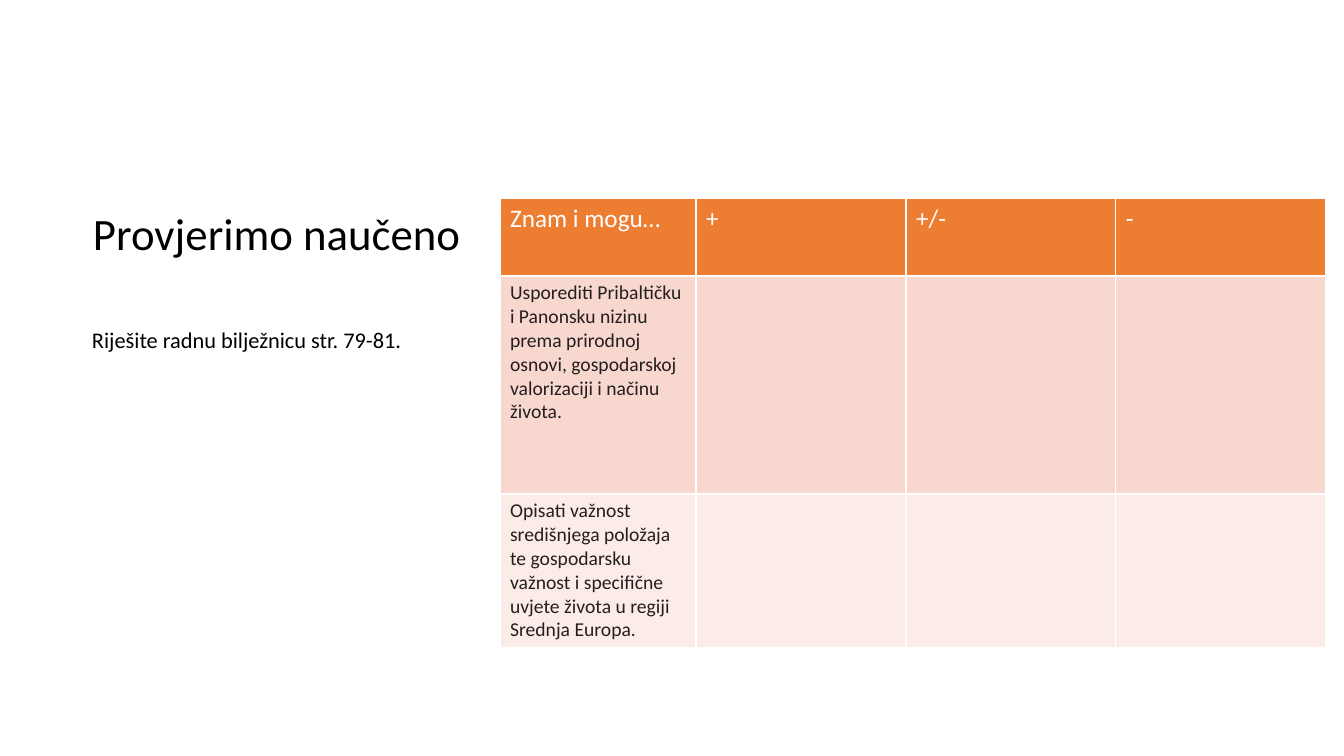
import pptx
import pptx.dml.color
import pptx.oxml.ns
import pptx.util
from lxml import etree

EMU_PER_PX = 914400 / 100.8
FONT = "Calibri"
WHITE, BLACK, INK = "FFFFFF", "000000", "231F20"
COLUMN_WIDTHS = [196, 210, 210, 210]
ROW_HEIGHTS = [78, 218, 154]
ROW_FILLS = ["ED7D31", "F8D7CE", "FCECE8"]
ROWS = [
    ["Znam i mogu…", "+", "+/-", "-"],
    ["Usporediti Pribaltičku i Panonsku nizinu prema prirodnoj osnovi, "
     "gospodarskoj valorizaciji i načinu života.", "", "", ""],
    ["Opisati važnost središnjega položaja te gospodarsku važnost i "
     "specifične uvjete života u regiji Srednja Europa.", "", "", ""],
]


def px(n):
    return pptx.util.Emu(round(n * EMU_PER_PX))


def rgb(color):
    return pptx.dml.color.RGBColor.from_string(color)


def set_font(p, size, color):
    p.font.name = FONT
    p.font.size = pptx.util.Pt(size)
    p.font.color.rgb = rgb(color)


def add_text(s, box, text, size):
    tf = s.shapes.add_textbox(*map(px, box)).text_frame
    tf.word_wrap = True
    tf.margin_left = tf.margin_right = tf.margin_top = tf.margin_bottom = 0
    p = tf.paragraphs[0]
    p.text = text
    p.line_spacing = 0.9
    set_font(p, size, BLACK)


def add_borders(cell, color):
    """Draw a 1 pt line on all four sides; call before setting the fill."""
    tc_pr = cell._tc.get_or_add_tcPr()
    qn = pptx.oxml.ns.qn
    for side in ("L", "R", "T", "B"):
        ln = etree.SubElement(tc_pr, qn(f"a:ln{side}"), w=str(pptx.util.Pt(1)))
        fill = etree.SubElement(ln, qn("a:solidFill"))
        etree.SubElement(fill, qn("a:srgbClr"), val=color)


def add_checklist(s, left, top):
    box = (left, top, sum(COLUMN_WIDTHS), sum(ROW_HEIGHTS))
    table = s.shapes.add_table(len(ROWS), len(COLUMN_WIDTHS), *map(px, box)).table
    for column, width in zip(table.columns, COLUMN_WIDTHS):
        column.width = px(width)
    for i, texts in enumerate(ROWS):
        table.rows[i].height = px(ROW_HEIGHTS[i])
        size, color = (18, WHITE) if i == 0 else (14, INK)
        for j, text in enumerate(texts):
            cell = table.cell(i, j)
            add_borders(cell, WHITE)
            cell.fill.solid()
            cell.fill.fore_color.rgb = rgb(ROW_FILLS[i])
            p = cell.text_frame.paragraphs[0]
            p.text = text
            set_font(p, size, color)
            p.font.bold = False


def main():
    prs = pptx.Presentation()
    prs.slide_width, prs.slide_height = px(1344), px(756)
    s = prs.slides.add_slide(prs.slide_layouts[6])
    add_text(s, (93, 212, 433, 188), "Provjerimo naučeno", 32)
    add_text(s, (92, 329, 433, 226), "Riješite radnu bilježnicu str. 79-81.", 16)
    add_checklist(s, 500, 198)
    prs.save("out.pptx")


if __name__ == "__main__":
    main()
